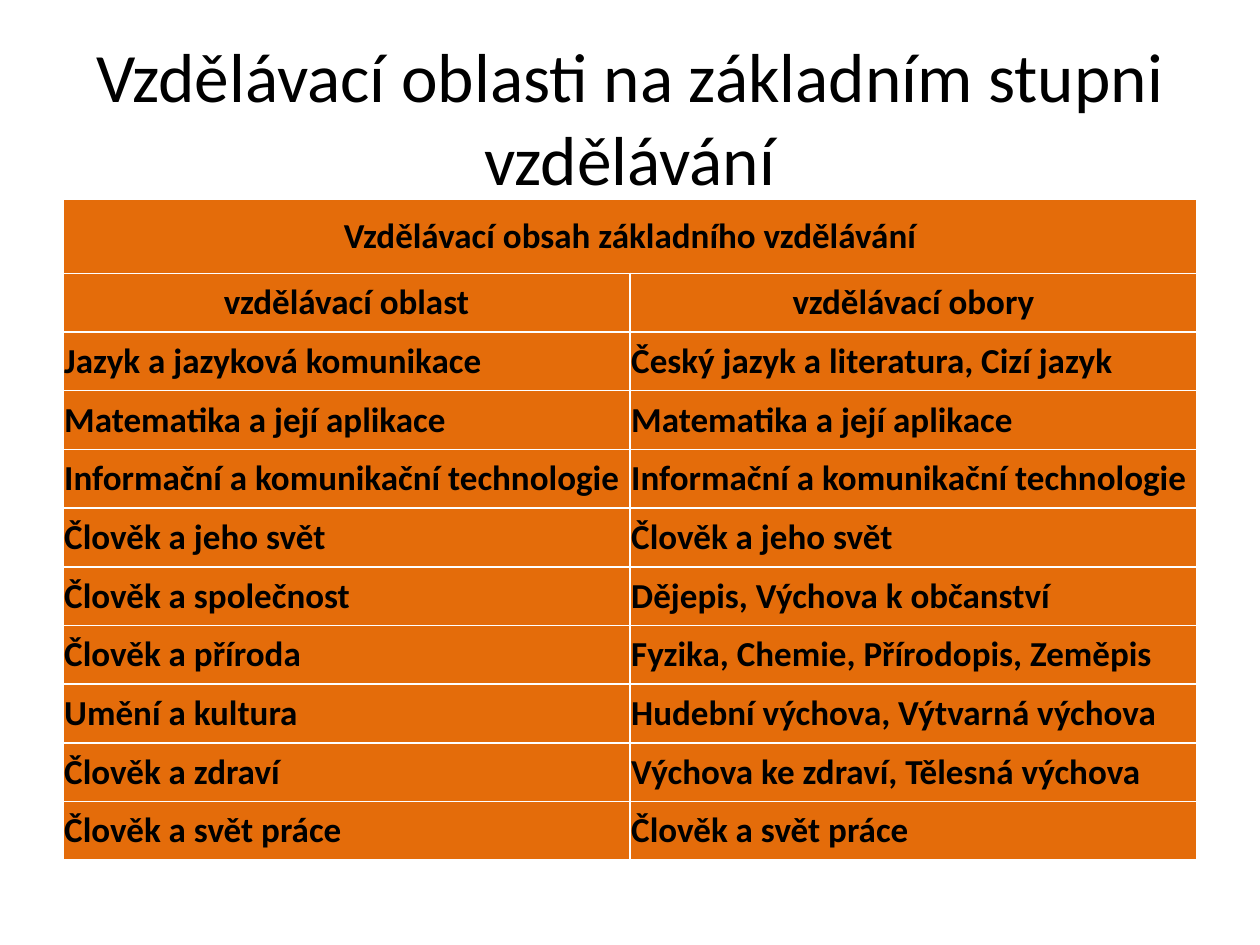
"""Build a slide with a table of educational areas and subjects."""
from lxml import etree
from pptx import Presentation
from pptx.dml.color import RGBColor
from pptx.enum.text import MSO_ANCHOR, PP_ALIGN
from pptx.oxml.ns import qn
from pptx.util import Inches, Pt

CENTER, LEFT = PP_ALIGN.CENTER, PP_ALIGN.LEFT
MIDDLE = MSO_ANCHOR.MIDDLE
COLORS = {"text": "000000", "cell": "E46C0A", "border": "FFFFFF"}
FONT = "Calibri"
TABLE_HEIGHT, HEADING_HEIGHT = 5.25, 0.59
ROWS = [
    ("Vzdělávací obsah základního vzdělávání", ""),
    ("vzdělávací oblast", "vzdělávací obory"),
    ("Jazyk a jazyková komunikace", "Český jazyk a literatura, Cizí jazyk"),
    ("Matematika a její aplikace", "Matematika a její aplikace"),
    ("Informační a komunikační technologie", "Informační a komunikační technologie"),
    ("Člověk a jeho svět", "Člověk a jeho svět"),
    ("Člověk a společnost", "Dějepis, Výchova k občanství"),
    ("Člověk a příroda", "Fyzika, Chemie, Přírodopis, Zeměpis"),
    ("Umění a kultura", "Hudební výchova, Výtvarná výchova"),
    ("Člověk a zdraví", "Výchova ke zdraví, Tělesná výchova"),
    ("Člověk a svět práce", "Člověk a svět práce"),
]


def format_paragraph(paragraph, size, bold, alignment):
    paragraph.alignment = alignment
    paragraph.font.name = FONT
    paragraph.font.size = Pt(size)
    paragraph.font.bold = bold
    paragraph.font.color.rgb = RGBColor.from_string(COLORS["text"])


def add_borders(cell):
    properties = cell._tc.get_or_add_tcPr()
    for side in ("lnL", "lnR", "lnT", "lnB"):
        line = etree.SubElement(properties, qn(f"a:{side}"), w=str(Pt(1)))
        fill = etree.SubElement(line, qn("a:solidFill"))
        etree.SubElement(fill, qn("a:srgbClr"), val=COLORS["border"])


presentation = Presentation()
presentation.slide_width = Inches(10)
presentation.slide_height = Inches(7.5)
slide = presentation.slides.add_slide(presentation.slide_layouts[5])

title = slide.shapes.title
title.left, title.top = Inches(0.5), Inches(0.3)
title.width, title.height = Inches(9), Inches(1.25)
title.text_frame.text = "Vzdělávací oblasti na základním stupni vzdělávání"
title.text_frame.vertical_anchor = MIDDLE
format_paragraph(title.text_frame.paragraphs[0], 39.6, False, CENTER)

table = slide.shapes.add_table(
    len(ROWS), 2, Inches(0.5), Inches(1.58), Inches(9), Inches(TABLE_HEIGHT)
).table
row_height = (TABLE_HEIGHT - HEADING_HEIGHT) / (len(ROWS) - 1)

for row_index, texts in enumerate(ROWS):
    table.rows[row_index].height = Inches(row_height if row_index else HEADING_HEIGHT)
    for column_index, text in enumerate(texts):
        cell = table.cell(row_index, column_index)
        cell.text = text
        cell.vertical_anchor = MIDDLE
        cell.margin_left = cell.margin_right = Inches(0.01)
        cell.margin_top = cell.margin_bottom = Inches(0.01)
        add_borders(cell)
        cell.fill.solid()
        cell.fill.fore_color.rgb = RGBColor.from_string(COLORS["cell"])
        alignment = CENTER if row_index < 2 else LEFT
        format_paragraph(cell.text_frame.paragraphs[0], 20, True, alignment)

table.cell(0, 0).merge(table.cell(0, 1))

presentation.save("out.pptx")
